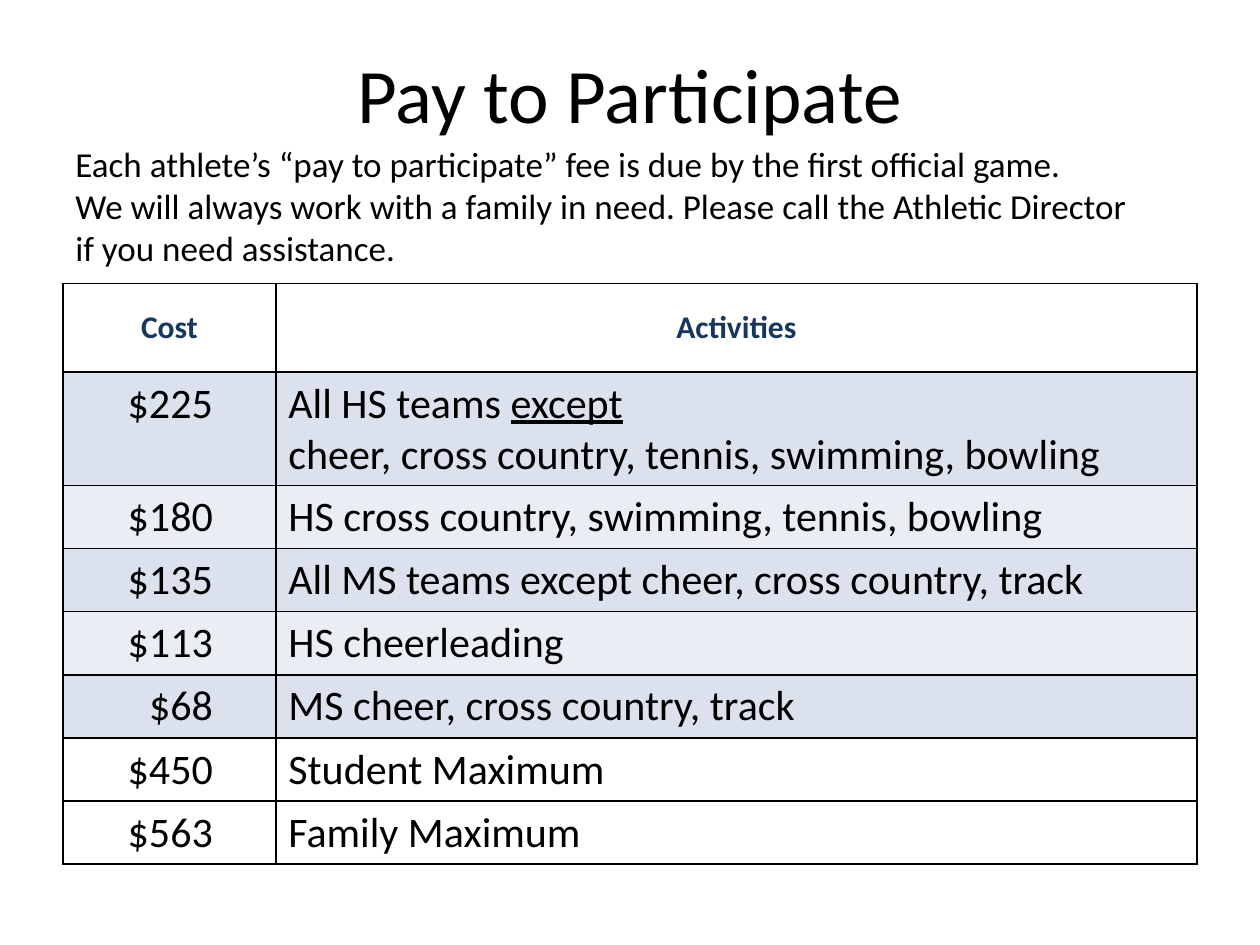
from lxml.etree import SubElement
from pptx import Presentation
from pptx.dml.color import RGBColor
from pptx.enum.text import MSO_ANCHOR, PP_ALIGN
from pptx.oxml.ns import qn
from pptx.util import Cm, Pt

BLACK, NAVY = "000000", "17375E"
BLUE, PALE = ("D0D8E8", 75), ("E9EDF4", 100)

FEES = [
    ("$225", [("All HS teams ", False), ("except", True), "break",
              ("cheer, cross country, tennis, swimming, bowling", False)], BLUE),
    ("$180", [("HS cross country, swimming, tennis, bowling", False)], PALE),
    ("$135", [("All MS teams except cheer, cross country, track", False)], BLUE),
    ("$113", [("HS cheerleading", False)], PALE),
    ("$68", [("MS cheer, cross country, track", False)], BLUE),
    ("$450", [("Student Maximum", False)], None),
    ("$563", [("Family Maximum", False)], None),
]
NOTICE = [
    "Each athlete’s “pay to participate” fee is due by the first official game.",
    "We will always work with a family in need. Please call the Athletic Director "
    "if you need assistance.",
]


def color(value):
    return RGBColor.from_string(value)


def apply(target, values):
    for name, value in values.items():
        setattr(target, name, value)


class SlideBuilder:
    font = "Calibri"
    border = Pt(1)

    def __init__(self, slide):
        self.slide = slide

    def add_runs(self, paragraph, parts, size, fill=BLACK, bold=False, align=PP_ALIGN.LEFT):
        paragraph.alignment = align
        for part in parts:
            if part == "break":
                paragraph.add_line_break()
                continue
            text, underline = part
            run = paragraph.add_run()
            run.text = text
            apply(run.font, {"name": self.font, "size": Pt(size), "bold": bold,
                             "underline": underline})
            run.font.color.rgb = color(fill)

    def text(self, box, lines, size, align=PP_ALIGN.LEFT, anchor=MSO_ANCHOR.TOP):
        shape = self.slide.shapes.add_textbox(*map(Cm, box))
        frame = shape.text_frame
        apply(frame, {"word_wrap": True, "vertical_anchor": anchor})
        for index, line in enumerate(lines):
            paragraph = frame.add_paragraph() if index else frame.paragraphs[0]
            self.add_runs(paragraph, [(line, False)], size, align=align)

    def table(self, box, widths, heights):
        shape = self.slide.shapes.add_table(len(heights), len(widths), *map(Cm, box))
        table = shape.table
        apply(table, {"first_row": False, "horz_banding": False})
        for column, width in zip(table.columns, widths):
            column.width = Cm(width)
        for row, height in zip(table.rows, heights):
            row.height = Cm(height)
        return table

    def cell(self, cell, parts, size, shade=None, layout=None, **style):
        apply(cell, layout or {})
        self.add_runs(cell.text_frame.paragraphs[0], parts, size, **style)
        properties = cell._tc.get_or_add_tcPr()
        for side in ("a:lnL", "a:lnR", "a:lnT", "a:lnB"):
            line = SubElement(properties, qn(side), w=str(self.border))
            SubElement(SubElement(line, qn("a:solidFill")), qn("a:srgbClr"), val=BLACK)
        if shade is None:
            cell.fill.background()
            return
        value, opacity = shade
        cell.fill.solid()
        cell.fill.fore_color.rgb = color(value)
        if opacity < 100:
            tint = properties.find(qn("a:solidFill")).find(qn("a:srgbClr"))
            SubElement(tint, qn("a:alpha"), val=str(opacity * 1000))


def main():
    presentation = Presentation()
    apply(presentation, {"slide_width": Cm(25.4), "slide_height": Cm(19.05)})
    builder = SlideBuilder(presentation.slides.add_slide(presentation.slide_layouts[6]))

    builder.text((1.27, 0.76, 22.86, 2.21), ["Pay to Participate"], 44,
                 PP_ALIGN.CENTER, MSO_ANCHOR.MIDDLE)

    heights = [1.78, 2.29] + [1.27] * 6
    table = builder.table((1.27, 5.72, 22.86, sum(heights)), (4.29, 18.57), heights)
    for column, heading in enumerate(("Cost", "Activities")):
        builder.cell(table.cell(0, column), [(heading, False)], 18,
                     layout={"vertical_anchor": MSO_ANCHOR.MIDDLE},
                     fill=NAVY, bold=True, align=PP_ALIGN.CENTER)
    for row, (cost, activities, shade) in enumerate(FEES, 1):
        builder.cell(table.cell(row, 0), [(cost, False)], 24, shade,
                     {"margin_right": Cm(1.27)}, align=PP_ALIGN.RIGHT)
        builder.cell(table.cell(row, 1), activities, 24, shade)

    builder.text((1.27, 2.74, 22.02, 2.82), NOTICE, 20)
    presentation.save("out.pptx")


if __name__ == "__main__":
    main()
